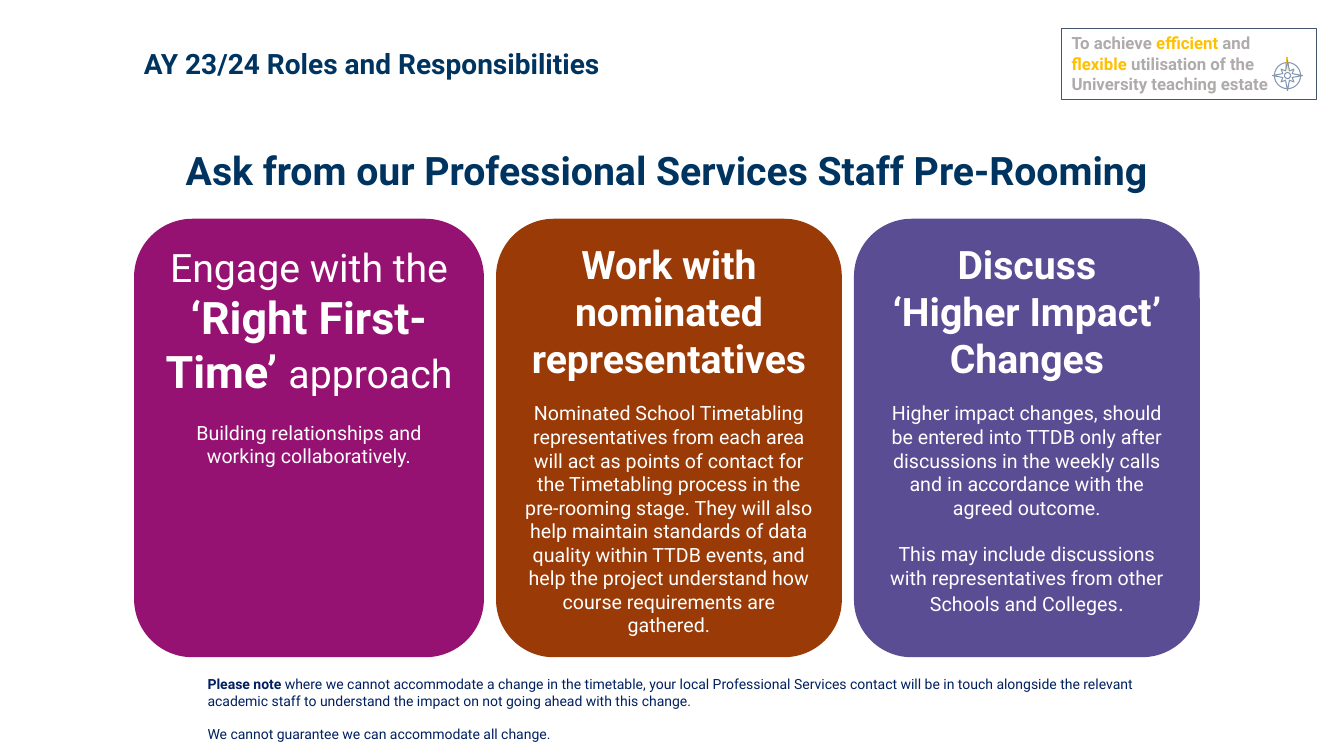
"""Build the roles and responsibilities slide."""
from dataclasses import dataclass
from math import cos, pi, sin

from pptx import Presentation
from pptx.dml.color import RGBColor
from pptx.enum.shapes import MSO_SHAPE
from pptx.enum.text import MSO_ANCHOR, PP_ALIGN
from pptx.util import Emu, Pt

RECTANGLE = MSO_SHAPE.RECTANGLE
ROUNDED = MSO_SHAPE.ROUNDED_RECTANGLE
OVAL = MSO_SHAPE.OVAL
TRIANGLE = MSO_SHAPE.ISOSCELES_TRIANGLE
LEFT, CENTER = PP_ALIGN.LEFT, PP_ALIGN.CENTER
TOP = MSO_ANCHOR.TOP
SCALE = 9144
CARD_LEFT, CARD_TOP, CARD_HEIGHT, CARD_GAP = 133, 217, 435, 12


@dataclass(frozen=True)
class Theme:
    """Font, colours and type sizes of the slide."""
    font: str = "Roboto"
    navy: str = "003460"
    note_blue: str = "002060"
    white: str = "FFFFFF"
    grey: str = "AFABAB"
    gold: str = "FFC000"
    pale: str = "F6F8FC"
    frame: str = "44546A"
    compass: str = "8497B0"
    magenta: str = "951272"
    rust: str = "9A3A06"
    violet: str = "5B4D94"
    title: int = 20
    heading: int = 28
    emphasis: int = 32
    body: int = 14
    body_end: int = 16
    goal: int = 12
    note: int = 10


THEME = Theme()


def px(value):
    """Turn px into EMU."""
    return Emu(round(value * SCALE))


def color(value):
    """Turn a hex string into a colour."""
    return RGBColor.from_string(value)


def write(shape, paragraphs, ink, align=LEFT, margin_top=5):
    """Write paragraphs, each a space before and a list of (text, size, bold, colour) runs."""
    frame = shape.text_frame
    frame.word_wrap = True
    frame.vertical_anchor = TOP
    frame.margin_top = px(margin_top)
    for index, (space, runs) in enumerate(paragraphs):
        paragraph = frame.add_paragraph() if index else frame.paragraphs[0]
        paragraph.alignment = align
        if space:
            paragraph.space_before = Pt(space)
        for text, size, bold, *own_ink in runs:
            run = paragraph.add_run()
            run.text = text
            run.font.name = THEME.font
            run.font.size = Pt(size)
            run.font.bold = bold
            run.font.color.rgb = color(own_ink[0] if own_ink else ink)


def style(shape, fill=None, line=None):
    """Set the fill and line of a shape and drop its shadow."""
    shape.shadow.inherit = False
    if fill:
        shape.fill.solid()
        shape.fill.fore_color.rgb = color(fill)
    else:
        shape.fill.background()
    if line:
        shape.line.color.rgb = color(line)
        shape.line.width = Pt(0.75)
    else:
        shape.line.fill.background()


def add_box(shapes, kind, box, fill=None, line=None):
    """Add a styled preset shape."""
    shape = shapes.add_shape(kind, *map(px, box))
    style(shape, fill, line)
    return shape


def add_text(slide, box, paragraphs, ink, align=LEFT):
    """Add a text box."""
    write(slide.shapes.add_textbox(*map(px, box)), paragraphs, ink, align)


def add_compass(shapes, center_x, center_y):
    """Draw a compass rose with a gold north needle."""
    for radius in (13, 3):
        box = (center_x - radius, center_y - radius, 2 * radius, 2 * radius)
        add_box(shapes, OVAL, box, line=THEME.compass)
    needle = add_box(shapes, TRIANGLE, (center_x - 3, center_y - 18, 5, 14), THEME.gold)
    needle.fill.gradient()
    needle.fill.gradient_angle = 90
    stops = ((0, THEME.pale), (0.77, THEME.gold))
    for stop, (position, ink) in zip(needle.fill.gradient_stops, stops):
        stop.position = position
        stop.color.rgb = color(ink)
    radii = (15, 5, 9, 5) * 4
    points = [(px(center_x + radius * sin(step * pi / 8)),
               px(center_y - radius * cos(step * pi / 8)))
              for step, radius in enumerate(radii)]
    builder = shapes.build_freeform(*points[0])
    builder.add_line_segments(points[1:], close=True)
    style(builder.convert_to_shape(), line=THEME.compass)


def add_goal(slide):
    """Add the framed goal with its compass."""
    shapes = slide.shapes.add_group_shape().shapes
    frame = add_box(shapes, RECTANGLE, (1053, 28, 253, 71), line=THEME.frame)
    size = THEME.goal
    write(frame, [(0, [
        ("To achieve ", size, True),
        ("efficient", size, True, THEME.gold),
        (" and ", size, True),
        ("flexible", size, True, THEME.gold),
        (" utilisation of the University teaching estate", size, True),
    ])], THEME.grey)
    add_compass(shapes, 1277, 75)


def add_cards(slide):
    """Add the row of three cards."""
    heading, body = THEME.heading, THEME.body
    cards = [
        (347, THEME.magenta, 7, [
            (0, [("Engage with the ", heading, False),
                 ("‘Right First-Time’ ", THEME.emphasis, True),
                 ("approach", heading, False)]),
            (16.4, [("Building relationships and working collaboratively.", body, False)]),
        ]),
        (343, THEME.rust, 5, [
            (0, [("Work with nominated representatives", heading, True)]),
            (14, [("Nominated School Timetabling representatives from each area will act as "
                   "points of contact for the Timetabling process in the pre-rooming stage. "
                   "They will also help maintain standards of data quality within TTDB events, "
                   "and help the project understand how course requirements are gathered.",
                   body, False)]),
        ]),
        (343, THEME.violet, 5, [
            (0, [("Discuss", heading, True)]),
            (0, [("‘Higher Impact’ Changes", heading, True)]),
            (14, [("Higher impact changes, should be entered into TTDB only after discussions "
                   "in the weekly calls and in accordance with the agreed outcome.",
                   body, False)]),
            (16.4, [("This may include discussions with representatives from other "
                     "Schools and Colleges", body, False),
                    (".", THEME.body_end, False)]),
        ]),
    ]
    left = CARD_LEFT
    for width, fill, margin_top, paragraphs in cards:
        card = add_box(slide.shapes, ROUNDED, (left, CARD_TOP, width, CARD_HEIGHT), fill)
        write(card, paragraphs, THEME.white, CENTER, margin_top)
        left += width + CARD_GAP


def main():
    """Build and save the slide."""
    presentation = Presentation()
    presentation.slide_width, presentation.slide_height = px(1333), px(750)
    slide = presentation.slides.add_slide(presentation.slide_layouts[6])
    add_text(slide, (133, 41, 900, 44),
             [(0, [("AY 23/24 Roles and Responsibilities", THEME.title, True)])], THEME.navy)
    add_goal(slide)
    add_text(slide, (133, 140, 1056, 57),
             [(0, [("Ask from our Professional Services Staff Pre-Rooming",
                    THEME.heading, True)])], THEME.navy, CENTER)
    add_cards(slide)
    add_text(slide, (196, 665, 942, 77), [
        (0, [("Please note ", THEME.note, True),
             ("where we cannot accommodate a change in the timetable, your local Professional "
              "Services contact will be in touch alongside the relevant academic staff to "
              "understand the impact on not going ahead with this change.", THEME.note, False)]),
        (11.7, [("We cannot guarantee we can accommodate all change.", THEME.note, False)]),
    ], THEME.note_blue)
    presentation.save("out.pptx")


if __name__ == "__main__":
    main()
